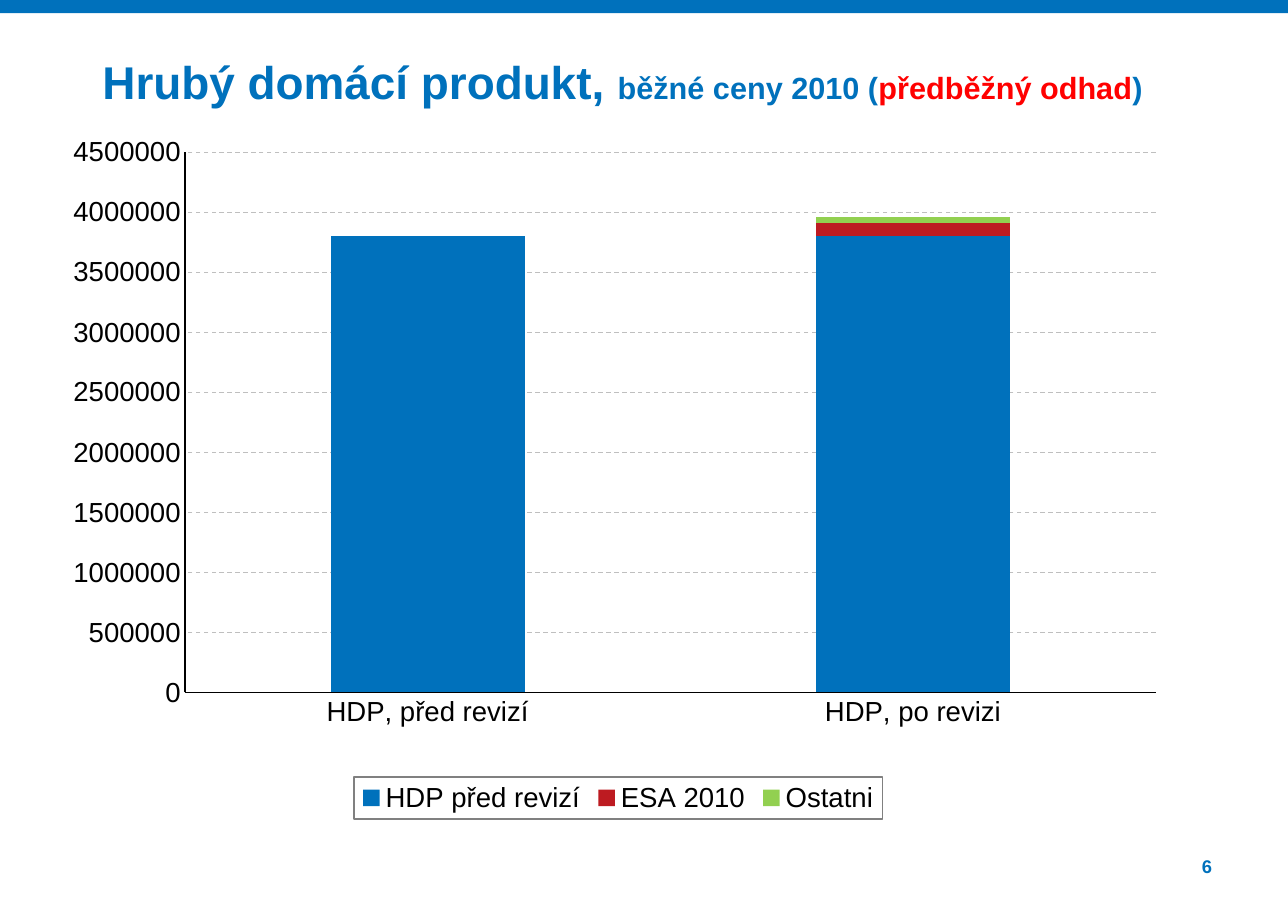
from pptx import Presentation, util as u
from pptx.chart.data import CategoryChartData
from pptx.dml.color import RGBColor
from pptx.enum import chart as ch, dml, shapes, text
from pptx.oxml import parse_xml
from pptx.oxml.ns import nsdecls, qn

PX = 9144  # 100 px to the inch
THEME = {
    "font": "Arial",
    "blue": "0071BC", "red": "FF0000", "wine": "BD1B21", "green": "92D050",
    "black": "000000", "grid": "BFBFBF", "frame": "808080",
    "head": 30, "sub": 20, "label": 18, "page": 12,
}


def style(font, size, color, bold=False):
    font.name = THEME["font"]
    font.size = u.Pt(THEME[size])
    font.bold = bold
    font.color.rgb = RGBColor.from_string(THEME[color])


def box(*nums):
    return [n * PX for n in nums]


deck = Presentation()
deck.slide_width, deck.slide_height = box(1169, 827)
slide = deck.slides.add_slide(deck.slide_layouts[5])

# Top band
band = slide.shapes.add_shape(shapes.MSO_SHAPE.RECTANGLE, *box(0, 0, 1169, 12))
band.shadow.inherit = False
band.fill.solid()
band.fill.fore_color.rgb = RGBColor.from_string(THEME["blue"])
band.line.fill.background()

# Title and page number
title = slide.shapes.title
title.left, title.top, title.width, title.height = box(93, 49, 1008, 73)
page = slide.shapes.add_textbox(*box(1022, 776, 78, 21))
LEFT, RIGHT = text.PP_ALIGN.LEFT, text.PP_ALIGN.RIGHT
for shape, align, runs in (
    (title, LEFT, [("Hrubý domácí produkt, ", "head", "blue"),
                   ("běžné ceny 2010 (", "sub", "blue"),
                   ("předběžný odhad", "sub", "red"),
                   (")", "sub", "blue")]),
    (page, RIGHT, [("6", "page", "blue")]),
):
    frame = shape.text_frame
    frame.margin_left = frame.margin_right = 0
    frame.margin_top = frame.margin_bottom = 0
    frame.word_wrap = True
    frame.auto_size = text.MSO_AUTO_SIZE.NONE
    frame.vertical_anchor = text.MSO_ANCHOR.TOP
    para = frame.paragraphs[0]
    para.alignment = align
    for words, size, color in runs:
        run = para.add_run()
        run.text = words
        style(run.font, size, color, bold=True)

# Chart data
SERIES = [
    ("HDP před revizí", (3800000, 3800000), "blue"),
    ("ESA 2010", (0, 110000), "wine"),
    ("Ostatni", (0, 50000), "green"),
]
data = CategoryChartData(number_format="0")
data.categories = ["HDP, před revizí", "HDP, po revizi"]
for name, vals, _ in SERIES:
    data.add_series(name, vals)

# Stacked columns
chart = slide.shapes.add_chart(
    ch.XL_CHART_TYPE.COLUMN_STACKED, *box(57, 122, 1008, 622), data).chart
chart.has_title = False
style(chart.font, "label", "black")
plot = chart.plots[0]
plot.vary_by_categories = False
plot.gap_width, plot.overlap = 150, 100
for bar, (_, _, color) in zip(plot.series, SERIES):
    bar.format.fill.solid()
    bar.format.fill.fore_color.rgb = RGBColor.from_string(THEME[color])

# Axes and grid
for axis in (chart.category_axis, chart.value_axis):
    axis.major_tick_mark = axis.minor_tick_mark = ch.XL_TICK_MARK.NONE
    axis.format.line.color.rgb = RGBColor.from_string(THEME["black"])
    axis.format.line.width = u.Pt(0.75)
    style(axis.tick_labels.font, "label", "black")
axis.minimum_scale, axis.maximum_scale, axis.major_unit = 0, 4500000, 500000
axis.has_major_gridlines = True
grid = axis.major_gridlines.format.line
grid.color.rgb = RGBColor.from_string(THEME["grid"])
grid.width = u.Pt(0.75)
grid.dash_style = dml.MSO_LINE.DASH

# Plot area position
area = chart._chartSpace.find(".//" + qn("c:plotArea"))
for old in area.findall(qn("c:layout")):
    area.remove(old)
spots = "".join(f'<c:{tag} val="{val}"/>' for tag, val in (
    ("layoutTarget", "inner"), ("xMode", "edge"), ("yMode", "edge"),
    ("x", 0.11), ("y", 0.026), ("w", 0.874), ("h", 0.789)))
area.insert(0, parse_xml(
    f'<c:layout {nsdecls("c")}><c:manualLayout>{spots}</c:manualLayout></c:layout>'))

# Framed legend
chart.has_legend = True
key = chart.legend
key.position = ch.XL_LEGEND_POSITION.BOTTOM
key.include_in_layout = False
style(key.font, "label", "black")
key._element.find(qn("c:txPr")).addprevious(parse_xml(
    f'<c:spPr {nsdecls("c", "a")}><a:ln w="9525"><a:solidFill>'
    f'<a:srgbClr val="{THEME["frame"]}"/></a:solidFill></a:ln></c:spPr>'))

deck.save("out.pptx")
